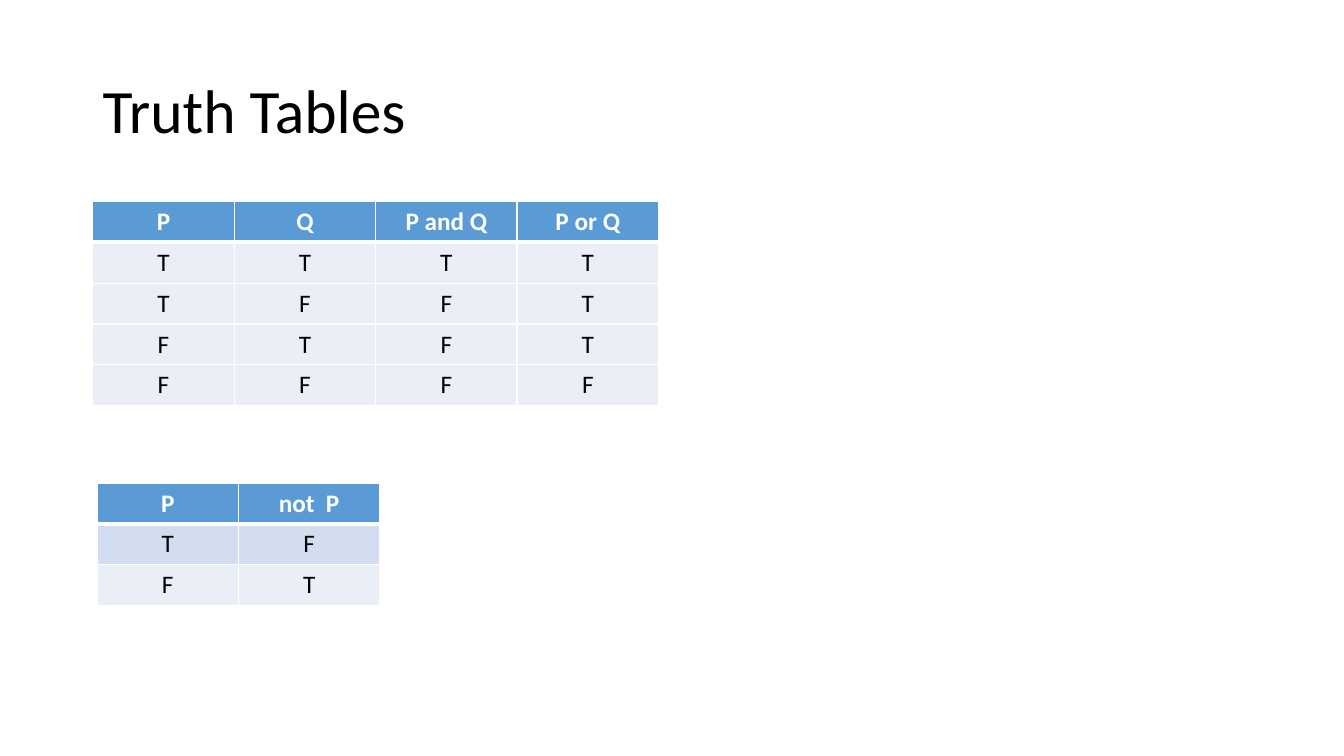
from lxml.etree import SubElement
from pptx import Presentation
from pptx.dml.color import RGBColor
from pptx.enum.text import MSO_ANCHOR, PP_ALIGN
from pptx.oxml.ns import qn
from pptx.util import Inches, Pt

BLACK = RGBColor(0x00, 0x00, 0x00)
WHITE = RGBColor(0xFF, 0xFF, 0xFF)
BLUE = RGBColor(0x5B, 0x9B, 0xD5)
MID_BLUE = RGBColor(0xD2, 0xDE, 0xEF)
PALE_BLUE = RGBColor(0xEA, 0xEF, 0xF7)


class Deck:
    """Holds the style, the grid and the current slide."""

    FONT = "Calibri"
    LEFT, TOP = Inches(0.92), Inches(0.4)
    COL, ROW = Pt(101), Pt(29.2)

    def __init__(self):
        self.prs = Presentation()
        self.prs.slide_width, self.prs.slide_height = Inches(13.33), Inches(7.5)
        self.s = self.prs.slides.add_slide(self.prs.slide_layouts[6])

    def box(self, col, row, cols, rows):
        """Turn grid columns and rows into left, top, width and height."""
        return (int(self.LEFT + col * self.COL), int(self.TOP + row * self.ROW),
                int(cols * self.COL), int(rows * self.ROW))

    def add_text(self, tf, text, color, **formats):
        p = tf.paragraphs[0]
        r = p.add_run()
        r.text = text
        r.font.color.rgb = color
        for name, value in {"name": self.FONT, **formats}.items():
            setattr(r.font, name, value)
        return p

    def title(self, text, col, row, cols, rows):
        tf = self.s.shapes.add_textbox(*self.box(col, row, cols, rows)).text_frame
        tf.word_wrap = True
        tf.vertical_anchor = MSO_ANCHOR.MIDDLE
        self.add_text(tf, text, BLACK, size=Pt(44)).line_spacing = 0.9

    def borders(self, cell, **widths):
        """Draw white cell borders; they must precede the fill in the XML."""
        tcPr = cell._tc.get_or_add_tcPr()
        for i, (side, width) in enumerate(widths.items()):
            ln = SubElement(tcPr, qn(f"a:ln{side}"), w=str(Pt(width)))
            fill = SubElement(ln, qn("a:solidFill"))
            SubElement(fill, qn("a:srgbClr"), val=str(WHITE))
            tcPr.insert(i, ln)

    def truth_table(self, header, rows, col, row, bands):
        cells = [header, *rows]
        frame = self.s.shapes.add_table(
            len(cells), len(header), *self.box(col, row, len(header), len(cells)))
        for i, values in enumerate(cells):
            head = i == 0
            for j, text in enumerate(values):
                cell = frame.table.cell(i, j)
                cell.fill.solid()
                cell.fill.fore_color.rgb = BLUE if head else bands[(i - 1) % len(bands)]
                self.borders(cell, L=1, R=1, T=3 if i == 1 else 1, B=3 if head else 1)
                p = self.add_text(cell.text_frame, text, WHITE if head else BLACK,
                                  size=Pt(18), bold=head)
                p.alignment = PP_ALIGN.CENTER


def main():
    deck = Deck()
    deck.title("Truth Tables", 0, 0, 8.2, 3.57)

    # Conjunction and disjunction
    deck.truth_table(["P", "Q", "P and Q", "P or Q"],
                     ["TTTT", "TFFT", "FTFT", "FFFF"],
                     0, 3.94, [PALE_BLUE])

    # Negation
    deck.truth_table(["P", "not  P"], ["TF", "FT"],
                     0.03, 10.83, [MID_BLUE, PALE_BLUE])

    deck.prs.save("out.pptx")


if __name__ == "__main__":
    main()
